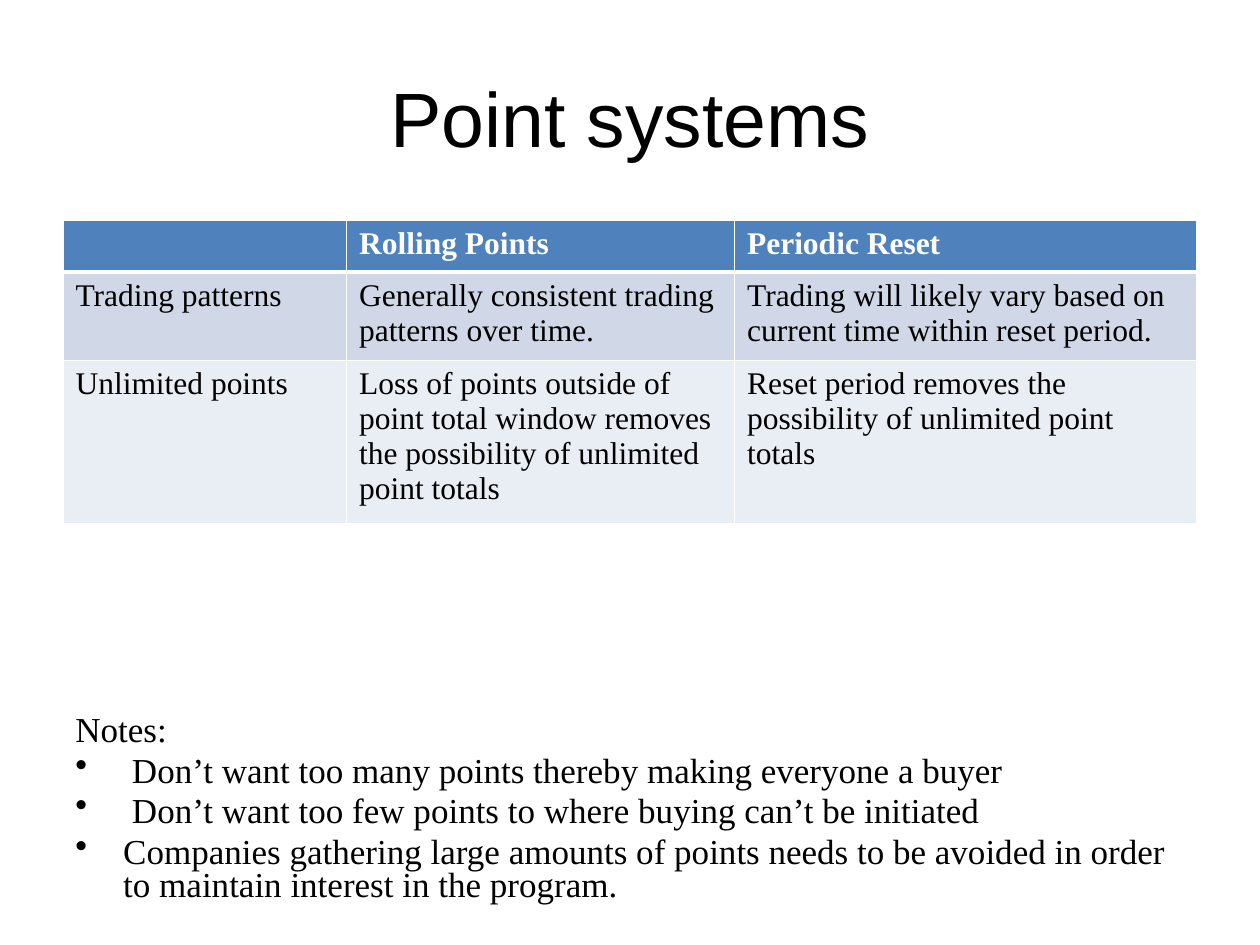
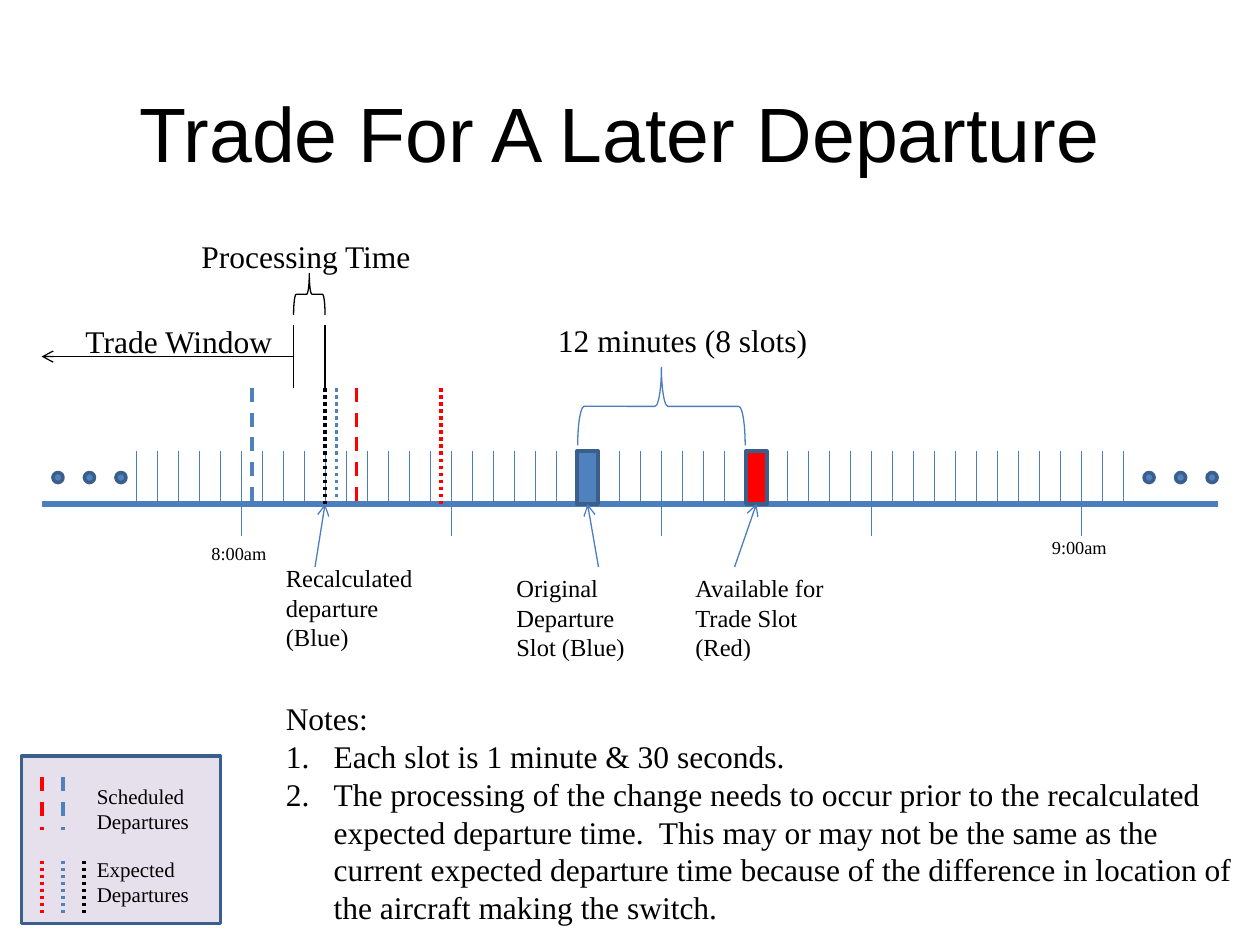
from lxml.etree import SubElement
from pptx import Presentation
from pptx.dml.color import RGBColor
from pptx.enum.dml import MSO_LINE
from pptx.enum.shapes import MSO_CONNECTOR, MSO_SHAPE
from pptx.enum.text import MSO_ANCHOR, PP_ALIGN
from pptx.oxml.ns import qn
from pptx.util import Inches, Pt

BLACK = RGBColor(0x00, 0x00, 0x00)
WHITE = RGBColor(0xFF, 0xFF, 0xFF)
RED = RGBColor(0xFF, 0x00, 0x00)
BLUE = RGBColor(0x4F, 0x81, 0xBD)
STROKE = RGBColor(0x4B, 0x7E, 0xBC)
EDGE = RGBColor(0x3A, 0x5F, 0x8C)
LILAC = RGBColor(0xE6, 0xE0, 0xEC)
BAND = RGBColor(0xD0, 0xD8, 0xE8)
PALE = RGBColor(0xE9, 0xED, 0xF4)

HEAD = "Arial"
BODY = "Times New Roman"
DASH = MSO_LINE.DASH
DOT = MSO_LINE.ROUND_DOT
SLOT = 1 / 6  # width of one slot on the time line


class Deck:
    def __init__(self):
        self.prs = Presentation()
        self.prs.slide_width = Inches(10)
        self.prs.slide_height = Inches(7.5)
        self.shapes = None

    def page(self):
        self.shapes = self.prs.slides.add_slide(self.prs.slide_layouts[6]).shapes

    def run(self, para, words, size, font=BODY, color=BLACK, bold=False):
        run = para.add_run()
        run.text = words
        run.font.size = Pt(size)
        run.font.name = font
        run.font.bold = bold
        run.font.color.rgb = color

    def box(self, x, y, w, h):
        frame = self.shapes.add_textbox(
            Inches(x), Inches(y), Inches(w), Inches(h)).text_frame
        frame.word_wrap = True
        return frame

    def title(self, words, x, y):
        frame = self.box(x, y, 9, 1.25)
        frame.vertical_anchor = MSO_ANCHOR.MIDDLE
        para = frame.paragraphs[0]
        para.alignment = PP_ALIGN.CENTER
        self.run(para, words, 44, HEAD)

    def text(self, words, x, y, w, h, size):
        self.run(self.box(x, y, w, h).paragraphs[0], words, size)

    def notes(self, items, x, y, w, h, size, mark, tight=False):
        """Write a "Notes:" heading and a bulleted or numbered list."""
        frame = self.box(x, y, w, h)
        for i, words in enumerate(["Notes:"] + items):
            para = frame.add_paragraph() if i else frame.paragraphs[0]
            if tight:
                para.line_spacing = 0.8
                para.space_before = Pt(size * 0.2)
            if i:
                props = para._p.get_or_add_pPr()
                props.set("marL", str(Inches(0.38)))
                props.set("indent", str(Inches(-0.38)))
                tag, key, value = mark
                SubElement(props, qn(tag)).set(key, value)
            self.run(para, words, size)

    def shape(self, kind, x, y, w, h, fill=None, line=EDGE, width=2, turn=0):
        item = self.shapes.add_shape(
            kind, Inches(x), Inches(y), Inches(w), Inches(h))
        item.shadow.inherit = False
        item.rotation = turn
        if fill is None:
            item.fill.background()
        else:
            item.fill.solid()
            item.fill.fore_color.rgb = fill
        item.line.color.rgb = line
        item.line.width = Pt(width)
        return item

    def line(self, x1, y1, x2, y2, color=STROKE, width=0.75, dash=None,
             arrow=False, goal=None):
        item = self.shapes.add_connector(
            MSO_CONNECTOR.STRAIGHT, Inches(x1), Inches(y1), Inches(x2), Inches(y2))
        item.line.color.rgb = color
        item.line.width = Pt(width)
        if dash:
            item.line.dash_style = dash
        if arrow:
            SubElement(item.line._ln, qn("a:tailEnd")).set("type", "arrow")
        SubElement(item._element.spPr, qn("a:effectLst"))
        if goal:
            item.end_connect(goal, 2)

    def edge(self, cell, tag, width):
        """Add one white cell border."""
        line = SubElement(cell._tc.get_or_add_tcPr(), qn(tag))
        line.set("w", str(Pt(width)))
        fill = SubElement(line, qn("a:solidFill"))
        SubElement(fill, qn("a:srgbClr")).set("val", str(WHITE))

    def table(self, rows, cols, x, y, high):
        table = self.shapes.add_table(
            len(rows), len(cols), Inches(x), Inches(y),
            Inches(sum(cols)), Inches(high * len(rows))).table
        for col, wide in zip(table.columns, cols):
            col.width = Inches(wide)
        for r, row in enumerate(rows):
            table.rows[r].height = Inches(high)
            top = r == 0
            for c, words in enumerate(row):
                cell = table.cell(r, c)
                for tag in ("a:lnL", "a:lnR", "a:lnT", "a:lnB"):
                    thick = (top and tag == "a:lnB") or (r == 1 and tag == "a:lnT")
                    self.edge(cell, tag, 3 if thick else 1)
                cell.fill.solid()
                cell.fill.fore_color.rgb = (BLUE, BAND, PALE)[r]
                if words:
                    self.run(cell.text_frame.paragraphs[0], words, 18,
                             color=WHITE if top else BLACK, bold=top)


def points(deck):
    deck.page()
    deck.title("Point systems", 0.5, 0.3)
    deck.table([
        ["", "Rolling Points", "Periodic Reset"],
        ["Trading patterns",
         "Generally consistent trading patterns over time.",
         "Trading will likely vary based on current time within reset period."],
        ["Unlimited points",
         "Loss of points outside of point total window removes the "
         "possibility of unlimited point totals",
         "Reset period removes the possibility of unlimited point totals"],
    ], [2.25, 3.08, 3.67], 0.5, 1.75, 0.41)
    deck.notes([
        " Don’t want too many points thereby making everyone a buyer",
        " Don’t want too few points to where buying can’t be initiated",
        "Companies gathering large amounts of points needs to be avoided "
        "in order to maintain interest in the program.",
    ], 0.5, 5.63, 9, 1.7, 20, ("a:buChar", "char", "•"), tight=True)


def trade(deck):
    deck.page()
    # Legend panel and title
    deck.shape(MSO_SHAPE.RECTANGLE, 0.17, 6, 1.58, 1.33, LILAC)
    deck.title("Trade For A Later Departure", 0.42, 0.42)

    # Time line: a tick for each slot, a long one every ten slots
    deck.line(0.33, 4, 9.67, 4, width=3)
    for i in range(48):
        x = (i + 6.5) * SLOT
        deck.line(x, 3.58, x, 4.25 if i % 10 == 5 else 4)
    for start in (0.42, 9.08):
        for i in range(3):
            deck.shape(MSO_SHAPE.OVAL, start + i * 0.25, 3.75, 0.08, 0.08, BLUE)
    deck.text("8:00am", 1.58, 4.25, 0.75, 0.29, 10.5)
    deck.text("9:00am", 8.25, 4.21, 0.75, 0.29, 10.5)

    # Slots to trade, each with its arrow and label
    for x, fill, foot, left, words in (
            (4.58, BLUE, 4.75, 4, "Original Departure Slot (Blue)"),
            (5.92, RED, 5.83, 5.42, "Available for Trade Slot (Red)")):
        slot = deck.shape(MSO_SHAPE.RECTANGLE, x, 3.58, SLOT, 0.42, fill)
        deck.line(foot, 4.5, x + SLOT / 2, 4, arrow=True, goal=slot)
        deck.text(words, left, 4.5, 1.33, 0.81, 14)
    deck.line(2.5, 4.5, 2.58, 4, arrow=True)
    deck.text("Recalculated departure (Blue)", 2.17, 4.42, 1.33, 0.81, 14)

    # Braces
    deck.shape(MSO_SHAPE.RIGHT_BRACE, 4.94, 2.56, 0.62, 1.33,
               line=STROKE, width=0.75, turn=270)
    deck.text("12 minutes (8 slots)", 4.33, 2.5, 2.42, 0.4, 18)
    deck.shape(MSO_SHAPE.RIGHT_BRACE, 2.29, 2.21, 0.33, 0.25,
               line=BLACK, width=0.75, turn=270)
    deck.text("Processing Time", 1.5, 1.83, 1.92, 0.4, 18)

    # Trade window
    for x in (2.33, 2.58):
        deck.line(x, 2.58, x, 3.08, BLACK)
    deck.line(2.33, 2.83, 0.33, 2.83, BLACK, arrow=True)
    deck.text("Trade Window", 0.58, 2.51, 1.92, 0.4, 18)

    # Scheduled (dashed) and expected (dotted) departures
    for x, color, dash in ((2, BLUE, DASH), (2.83, RED, DASH), (2.58, BLACK, DOT),
                           (2.67, BLUE, DOT), (3.5, RED, DOT)):
        deck.line(x, 3.08, x, 4, color, 2, dash)

    # Legend
    for y, dash, colors in ((6.17, DASH, (RED, BLUE)),
                            (6.83, DOT, (RED, BLUE, BLACK))):
        for i, color in enumerate(colors):
            x = (i + 2) * SLOT
            deck.line(x, y, x, y + 0.42, color, 2, dash)
    deck.text("Scheduled Departures", 0.67, 6.17, 1.08, 0.5, 12)
    deck.text("Expected Departures", 0.67, 6.75, 1.08, 0.5, 12)

    deck.notes([
        "Each slot is 1 minute & 30 seconds.",
        "The processing of the change needs to occur prior to the recalculated "
        "expected departure time.  This may or may not be the same as the "
        "current expected departure time because of the difference in location "
        "of the aircraft making the switch.",
    ], 2.17, 5.5, 7.83, 1.92, 18, ("a:buAutoNum", "type", "arabicPeriod"))


def main():
    deck = Deck()
    points(deck)
    trade(deck)
    deck.prs.save("out.pptx")


if __name__ == "__main__":
    main()
